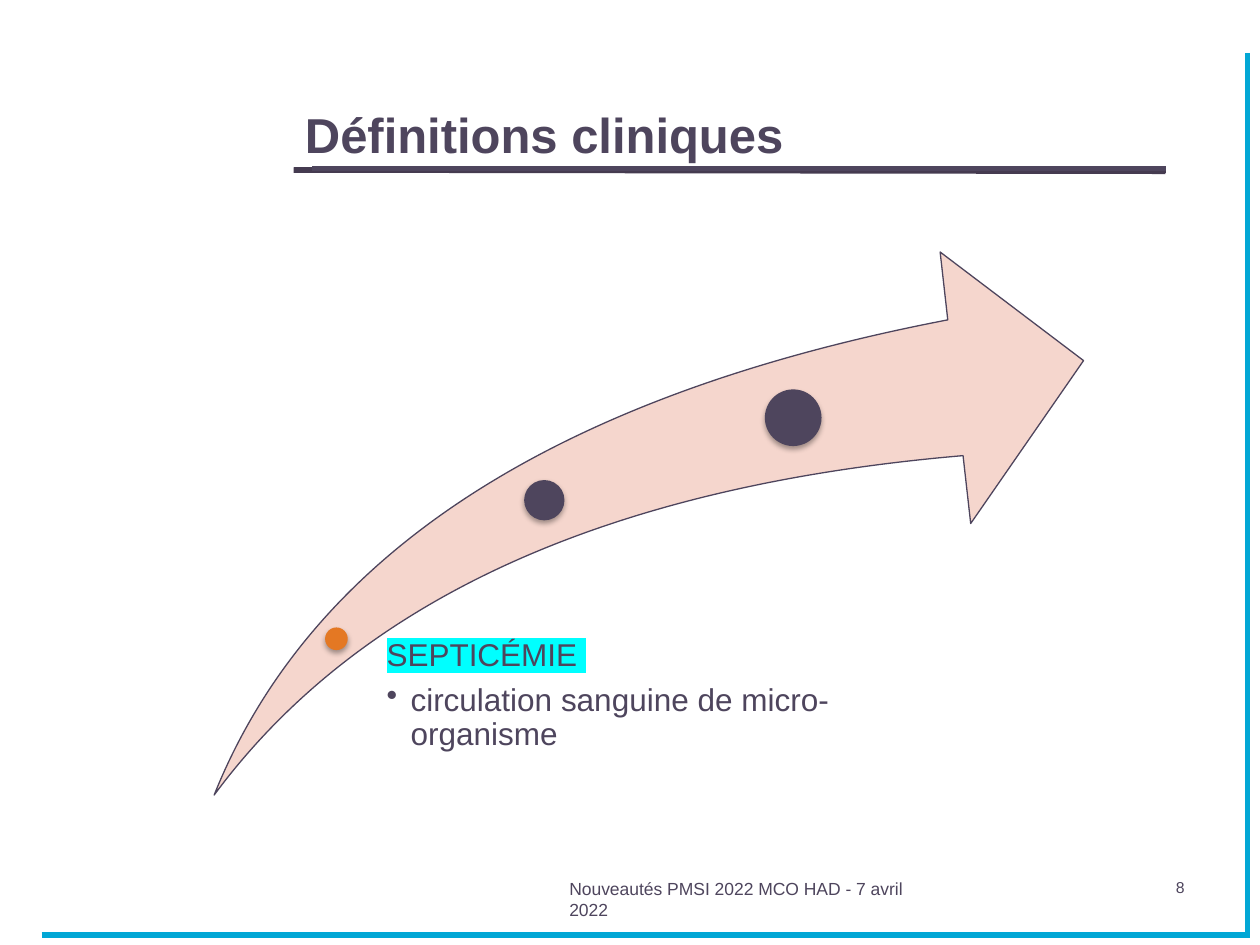
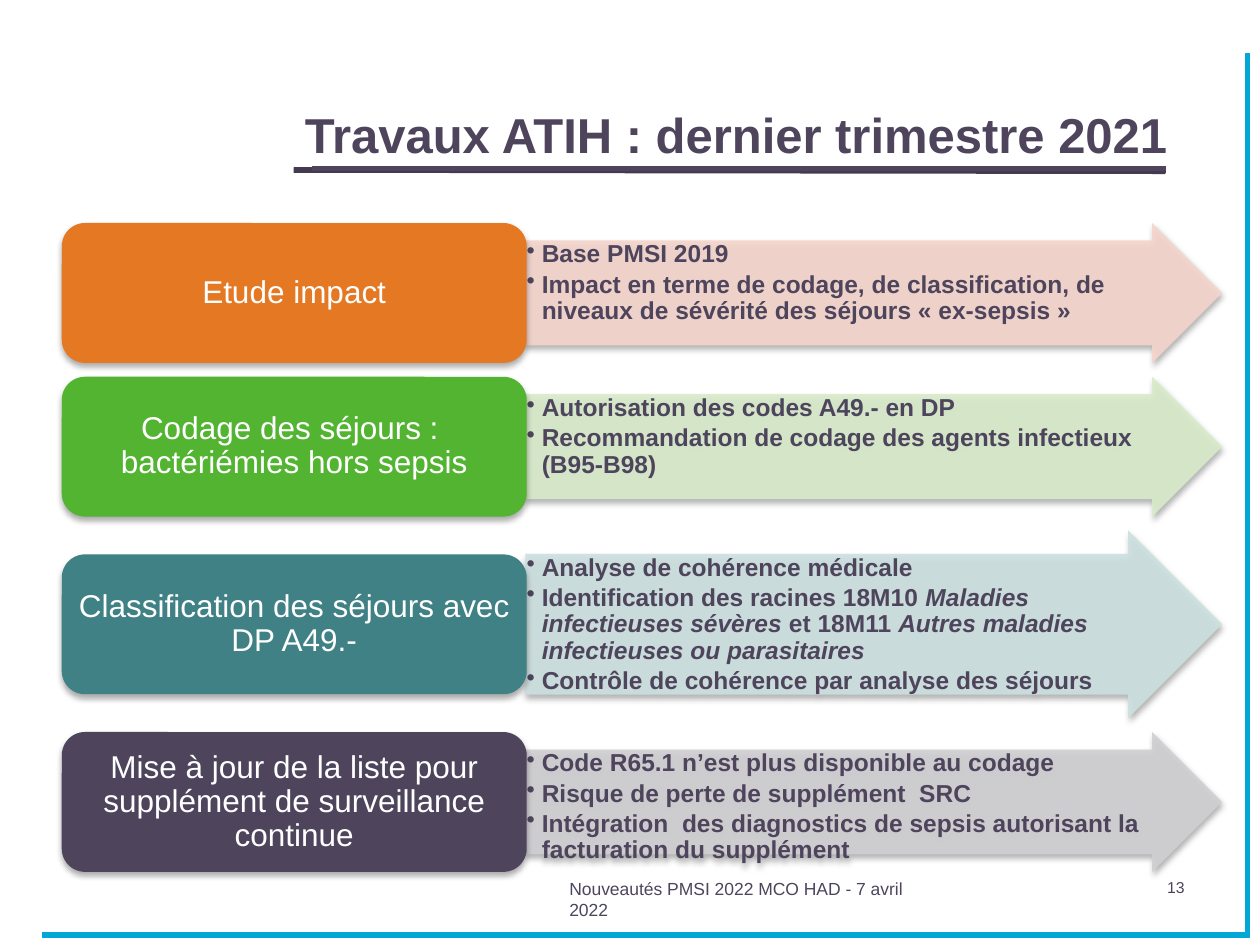
from dataclasses import dataclass
from typing import NamedTuple

from lxml.etree import SubElement
from pptx import Presentation
from pptx.dml.color import RGBColor
from pptx.enum.shapes import MSO_CONNECTOR, MSO_SHAPE
from pptx.enum.text import MSO_ANCHOR, MSO_AUTO_SIZE, PP_ALIGN
from pptx.oxml.ns import qn
from pptx.util import Emu, Pt

EMU_PER_PX = 9144  # 100 px to the inch


@dataclass(frozen=True)
class Theme:
    font: str = "Arial"
    ink: str = "4E455D"
    title_rule: str = "453B50"
    frame: str = "02A7D5"
    white: str = "FFFFFF"
    orange: str = "E47823"
    green: str = "52B431"
    teal: str = "3F8185"
    pale_orange: str = "F5D6CD"
    pale_green: str = "D8EBCB"
    pale_teal: str = "CCE0DF"
    pale_ink: str = "D0CFD2"
    highlight: str = "00FFFF"
    title_size: float = 28
    body_size: float = 18
    detail_size: float = 14
    footer_size: float = 10
    number_size: float = 9
    rule_width: float = 3.06
    outline_width: float = 0.75


THEME = Theme()


class Box(NamedTuple):
    left: int
    top: int
    width: int
    height: int


class Rule(NamedTuple):
    x1: int
    y1: int
    x2: int
    y2: int
    color: str


class Shadow(NamedTuple):
    alpha: int
    blur: float
    distance: float


class Dot(NamedTuple):
    left: int
    top: int
    size: int
    color: str


class Span(NamedTuple):
    text: str
    italic: bool = False


class Work(NamedTuple):
    label: str
    color: str
    pale: str
    height: int
    details: list[list[Span]]


FRAME_RULES = [
    Rule(233, 135, 925, 136, THEME.title_rule),
    Rule(233, 135, 925, 135, THEME.title_rule),
    Rule(33, 742, 992, 742, THEME.frame),
    Rule(990, 742, 990, 42, THEME.frame),
    Rule(248, 134, 925, 134, THEME.ink),
]
FOOTER = "Nouveautés PMSI 2022 MCO HAD - 7 avril 2022"
DOT_SHADOW = Shadow(35, 3.1, 1.8)
WORK_SHADOW = Shadow(32, 3.5, 2.2)

DOTS = [
    Dot(258, 498, 18, THEME.orange),
    Dot(416, 381, 32, THEME.ink),
    Dot(607, 309, 45, THEME.ink),
]

LABEL_HEIGHT = 111
WORKS = [
    Work("Etude impact", THEME.orange, THEME.pale_orange, LABEL_HEIGHT, [
        [Span("Base PMSI 2019")],
        [Span("Impact en terme de codage, de classification, de niveaux de "
              "sévérité des séjours « ex-sepsis »")],
    ]),
    Work("Codage des séjours :  bactériémies hors sepsis", THEME.green,
         THEME.pale_green, LABEL_HEIGHT, [
             [Span("Autorisation des codes A49.- en DP")],
             [Span("Recommandation de codage des agents infectieux (B95-B98)")],
         ]),
    Work("Classification des séjours avec DP A49.-", THEME.teal,
         THEME.pale_teal, 149, [
             [Span("Analyse de cohérence médicale")],
             [Span("Identification des racines 18M10 "),
              Span("Maladies infectieuses sévères ", True),
              Span("et 18M11 "),
              Span("Autres maladies infectieuses ou parasitaires", True)],
             [Span("Contrôle de cohérence par analyse des séjours")],
         ]),
    Work("Mise à jour de la liste pour supplément de surveillance continue",
         THEME.ink, THEME.pale_ink, LABEL_HEIGHT, [
             [Span("Code R65.1 n’est plus disponible au codage")],
             [Span("Risque de perte de supplément  SRC")],
             [Span("Intégration  des diagnostics de sepsis autorisant la "
                   "facturation du supplément")],
         ]),
]


def px(value: float) -> Emu:
    return Emu(round(value * EMU_PER_PX))


def place(box: Box) -> list[Emu]:
    return [px(length) for length in box]


# Text
def style(paragraph, size: float, color: str = THEME.ink, bold: bool = False) -> None:
    font = paragraph.font
    font.name, font.size, font.bold = THEME.font, Pt(size), bold
    font.color.rgb = RGBColor.from_string(color)


def space(paragraph, size: float, after: float) -> None:
    """Tight lines, with a gap after as a share of the type size."""
    paragraph.line_spacing = 0.9
    paragraph.space_after = Pt(round(size * after, 1))


def add_bullet(paragraph, indent: int) -> None:
    properties = paragraph._p.get_or_add_pPr()
    properties.set("marL", str(px(indent)))
    properties.set("indent", str(px(-indent)))
    SubElement(properties, qn("a:buChar")).set("char", "•")


def set_frame(frame, insets: tuple[int, int, int, int] = (10, 5, 10, 5),
              anchor: MSO_ANCHOR = MSO_ANCHOR.TOP) -> None:
    frame.word_wrap = True
    frame.auto_size = MSO_AUTO_SIZE.NONE
    frame.vertical_anchor = anchor
    (frame.margin_left, frame.margin_top,
     frame.margin_right, frame.margin_bottom) = map(px, insets)


def add_note(slide, box: Box, text: str, size: float, align: PP_ALIGN) -> None:
    frame = slide.shapes.add_textbox(*place(box)).text_frame
    set_frame(frame)
    paragraph = frame.paragraphs[0]
    paragraph.text, paragraph.alignment = text, align
    style(paragraph, size)


# Shapes
def add_rule(slide, rule: Rule) -> None:
    connector = slide.shapes.add_connector(
        MSO_CONNECTOR.STRAIGHT, px(rule.x1), px(rule.y1), px(rule.x2), px(rule.y2))
    connector.line.color.rgb = RGBColor.from_string(rule.color)
    connector.line.width = Pt(THEME.rule_width)
    SubElement(connector._element.spPr, qn("a:effectLst"))


def add_filled(slide, kind: MSO_SHAPE, box: Box, color: str,
               shadow: Shadow | None = None):
    shape = slide.shapes.add_shape(kind, *place(box))
    shape.fill.solid()
    shape.fill.fore_color.rgb = RGBColor.from_string(color)
    shape.line.fill.background()
    shape.shadow.inherit = False
    if shadow:
        effects = shape._element.spPr.find(qn("a:effectLst"))
        outer = SubElement(effects, qn("a:outerShdw"), blurRad=str(Pt(shadow.blur)),
                           dist=str(Pt(shadow.distance)), dir="5400000",
                           rotWithShape="0")
        black = SubElement(outer, qn("a:srgbClr"), val="000000")
        SubElement(black, qn("a:alpha"), val=str(shadow.alpha * 1000))
    return shape


def start_slide(deck, title: str, title_width: int, number: int):
    """Title, rules, footer and number that every slide shares."""
    slide = deck.slides.add_slide(deck.slide_layouts[5])
    heading = slide.shapes.title
    heading.left, heading.top, heading.width, heading.height = place(
        Box(232, 26, title_width, 109))
    set_frame(heading.text_frame, anchor=MSO_ANCHOR.BOTTOM)
    paragraph = heading.text_frame.paragraphs[0]
    paragraph.text, paragraph.alignment = title, PP_ALIGN.LEFT
    style(paragraph, THEME.title_size, bold=True)
    for rule in FRAME_RULES:
        add_rule(slide, rule)
    add_note(slide, Box(767, 692, 183, 44), str(number), THEME.number_size,
             PP_ALIGN.RIGHT)
    add_note(slide, Box(442, 692, 317, 50), FOOTER, THEME.footer_size, PP_ALIGN.LEFT)
    return slide


# Slide: clinical definitions
def build_definitions(deck) -> None:
    slide = start_slide(deck, "Définitions cliniques", 667, 8)
    swoosh = add_filled(slide, MSO_SHAPE.SWOOSH_ARROW, Box(170, 200, 690, 431),
                        THEME.pale_orange)
    swoosh.adjustments[0] = swoosh.adjustments[1] = 0.25
    swoosh.line.color.rgb = RGBColor.from_string(THEME.ink)
    swoosh.line.width = Pt(THEME.outline_width)
    for dot in DOTS:
        add_filled(slide, MSO_SHAPE.OVAL, Box(dot.left, dot.top, dot.size, dot.size),
                   dot.color, DOT_SHADOW)

    frame = slide.shapes.add_textbox(*place(Box(297, 507, 443, 125))).text_frame
    set_frame(frame, (10, 0, 0, 0))
    term, meaning = frame.paragraphs[0], frame.add_paragraph()
    term.text = "SEPTICÉMIE "
    marker = SubElement(term.runs[0]._r.get_or_add_rPr(), qn("a:highlight"))
    SubElement(marker, qn("a:srgbClr"), val=THEME.highlight)
    meaning.text = "circulation sanguine de micro-organisme"
    add_bullet(meaning, 19)
    for paragraph, after in ((term, 0.35), (meaning, 0.15)):
        space(paragraph, THEME.body_size, after)
        style(paragraph, THEME.body_size)


# Slide: work of the last quarter
def add_work(slide, work: Work, top: int) -> None:
    arrow = add_filled(slide, MSO_SHAPE.RIGHT_ARROW, Box(417, top, 553, work.height),
                       work.pale, WORK_SHADOW)
    arrow.adjustments[0], arrow.adjustments[1] = 0.75, 0.5
    tint = arrow._element.spPr.find(qn("a:solidFill"))[0]
    SubElement(tint, qn("a:alpha"), val="90000")
    frame = arrow.text_frame
    set_frame(frame, (1, 1, 1, 1))
    for index, spans in enumerate(work.details):
        detail = frame.add_paragraph() if index else frame.paragraphs[0]
        for span in spans:
            run = detail.add_run()
            run.text = span.text
            if span.italic:
                run.font.italic = True
        add_bullet(detail, 12)
        detail.alignment = PP_ALIGN.LEFT
        space(detail, THEME.detail_size, 0.15)
        style(detail, THEME.detail_size, bold=True)

    label_top = top + (work.height - LABEL_HEIGHT) // 2
    label = add_filled(slide, MSO_SHAPE.ROUNDED_RECTANGLE,
                       Box(49, label_top, 369, LABEL_HEIGHT), work.color, WORK_SHADOW)
    set_frame(label.text_frame, (7, 4, 7, 4), MSO_ANCHOR.MIDDLE)
    caption = label.text_frame.paragraphs[0]
    caption.text, caption.alignment = work.label, PP_ALIGN.CENTER
    space(caption, THEME.body_size, 0.35)
    style(caption, THEME.body_size, THEME.white)


def build_works(deck) -> None:
    slide = start_slide(deck, "Travaux ATIH : dernier trimestre 2021", 732, 13)
    top, gap = 177, 11
    for work in WORKS:
        add_work(slide, work, top)
        top += work.height + gap


def main() -> None:
    deck = Presentation()
    deck.slide_width, deck.slide_height = px(1000), px(750)
    build_definitions(deck)
    build_works(deck)
    deck.save("out.pptx")


if __name__ == "__main__":
    main()
